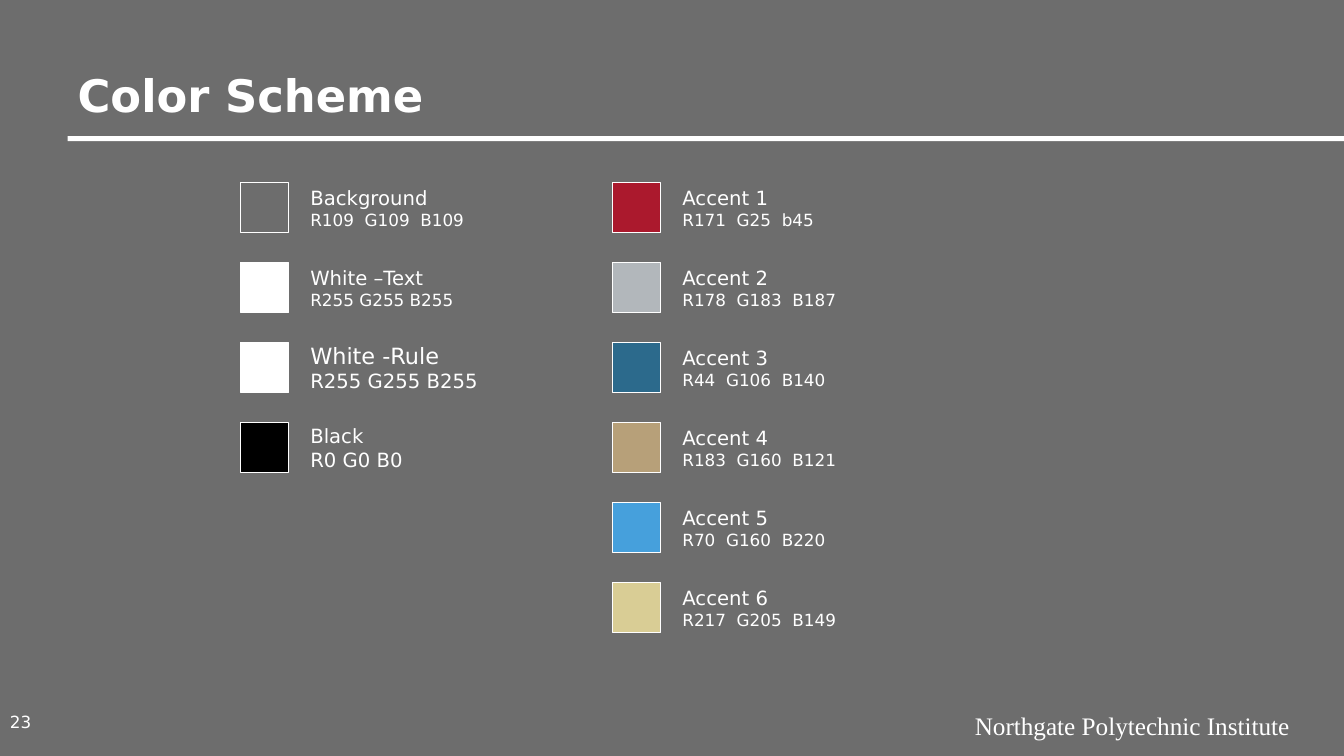
from pptx import Presentation
from pptx.dml.color import RGBColor
from pptx.enum.shapes import MSO_SHAPE
from pptx.enum.text import MSO_ANCHOR, PP_ALIGN
from pptx.util import Inches, Pt

COLORS = {
    "back": "6D6D6D", "white": "FFFFFF", "black": "000000",
    "red": "AB192D", "silver": "B2B7BB", "blue": "2C6A8C",
    "tan": "B7A079", "sky": "46A0DC", "sand": "D9CD95",
}
SANS, SERIF = "DejaVu Sans", "Times New Roman"
TOP, PITCH = 1.81, 0.794

# Each entry: fill, name, name size, values, values size
BASE = [
    ("back", "Background", 14, "R109  G109  B109", 12),
    ("white", "White –Text", 14, "R255 G255 B255", 12),
    ("white", "White -Rule", 16, "R255 G255 B255", 14),
    ("black", "Black", 14, "R0 G0 B0", 14),
]
ACCENTS = [
    ("red", "Accent 1", 14, "R171  G25  b45", 12),
    ("silver", "Accent 2", 14, "R178  G183  B187", 12),
    ("blue", "Accent 3", 14, "R44  G106  B140", 12),
    ("tan", "Accent 4", 14, "R183  G160  B121", 12),
    ("sky", "Accent 5", 14, "R70  G160  B220", 12),
    ("sand", "Accent 6", 14, "R217  G205  B149", 12),
]


def color(name):
    return RGBColor.from_string(COLORS[name])


def fill_text(frame, lines, anchor=MSO_ANCHOR.MIDDLE, align=PP_ALIGN.LEFT,
              face=SANS, bold=False):
    """Write (text, size) lines, one paragraph each."""
    frame.word_wrap = True
    frame.vertical_anchor = anchor
    for i, (text, size) in enumerate(lines):
        para = frame.add_paragraph() if i else frame.paragraphs[0]
        para.alignment = align
        run = para.add_run()
        run.text = text
        style = {"name": face, "size": Pt(size), "bold": bold}
        for key, value in style.items():
            setattr(run.font, key, value)
        run.font.color.rgb = color("white")


def add_text(slide, box, lines, **style):
    label = slide.shapes.add_textbox(*map(Inches, box))
    fill_text(label.text_frame, lines, **style)


def add_box(slide, box, fill, line=None):
    shape = slide.shapes.add_shape(MSO_SHAPE.RECTANGLE, *map(Inches, box))
    shape.shadow.inherit = False
    shape.fill.solid()
    shape.fill.fore_color.rgb = color(fill)
    if line:
        shape.line.color.rgb = color(line)
        shape.line.width = Pt(0.75)
    else:
        shape.line.fill.background()


def add_title(slide, text):
    title = slide.shapes.title
    place = {"left": 0.67, "top": 0.38, "width": 12, "height": 0.88}
    for key, value in place.items():
        setattr(title, key, Inches(value))
    fill_text(title.text_frame, [(text, 32)], anchor=MSO_ANCHOR.BOTTOM,
              bold=True)


def add_column(slide, left, swatches):
    for row, (fill, name, size, values, small) in enumerate(swatches):
        top = TOP + row * PITCH
        add_box(slide, (left, top, 0.47, 0.5), fill, "white")
        add_text(slide, (left + 0.59, top - 0.02, 2.2, 0.54),
                 [(name, size), (values, small)])


def main():
    deck = Presentation()
    deck.slide_width, deck.slide_height = Inches(13.33), Inches(7.5)
    slide = deck.slides.add_slide(deck.slide_layouts[5])
    slide.background.fill.solid()
    slide.background.fill.fore_color.rgb = color("back")

    # Heading and rule
    add_title(slide, "Color Scheme")
    add_box(slide, (0.67, 1.35, 12.66, 0.05), "white")

    # Swatches
    add_column(slide, 2.39, BASE)
    add_column(slide, 6.08, ACCENTS)

    # Footer
    add_text(slide, (0, 6.99, 0.67, 0.34), [("23", 12)])
    add_text(slide, (8, 7, 4.89, 0.4),
             [("Northgate Polytechnic Institute", 18)],
             anchor=MSO_ANCHOR.TOP, align=PP_ALIGN.RIGHT, face=SERIF)

    deck.save("out.pptx")


if __name__ == "__main__":
    main()
